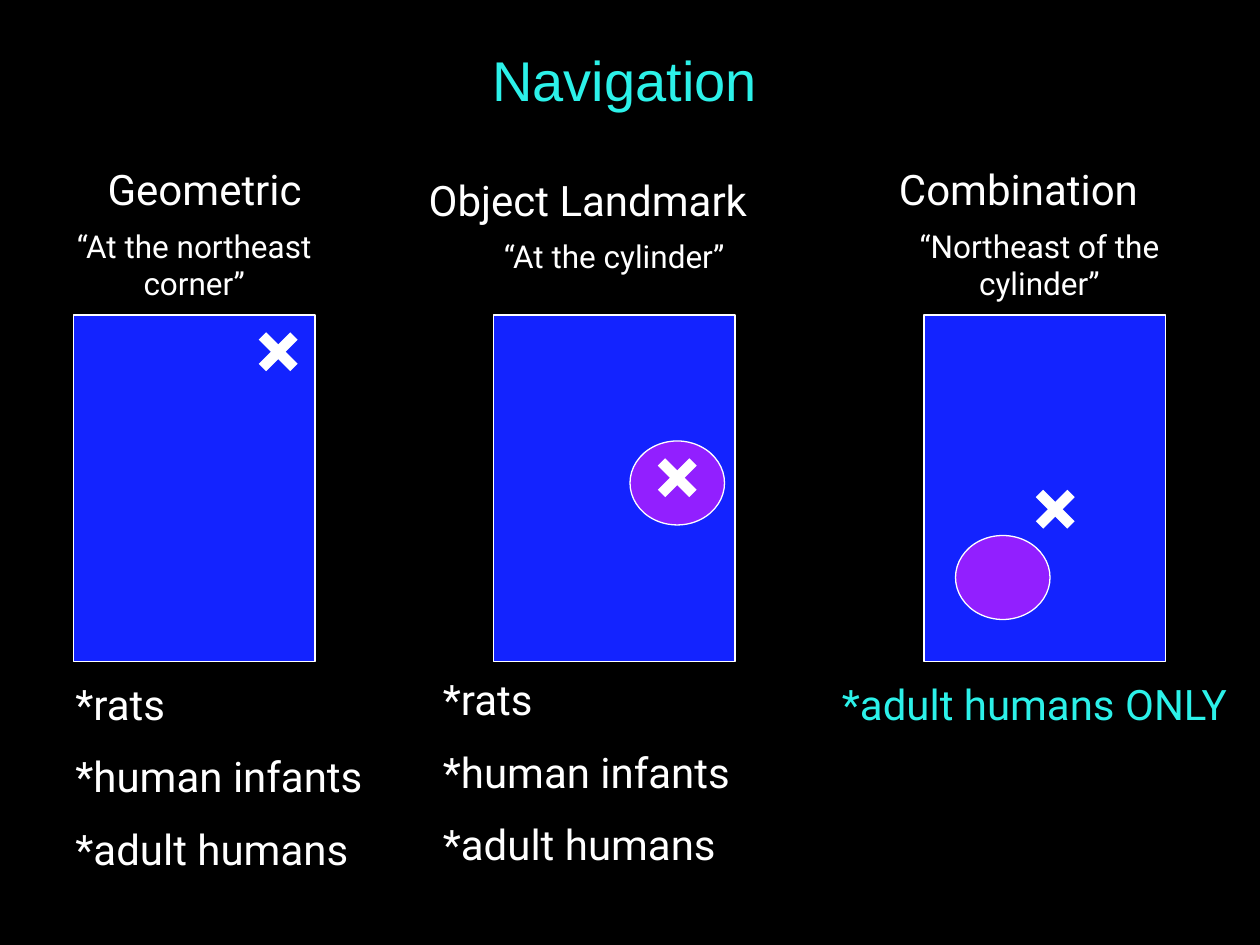
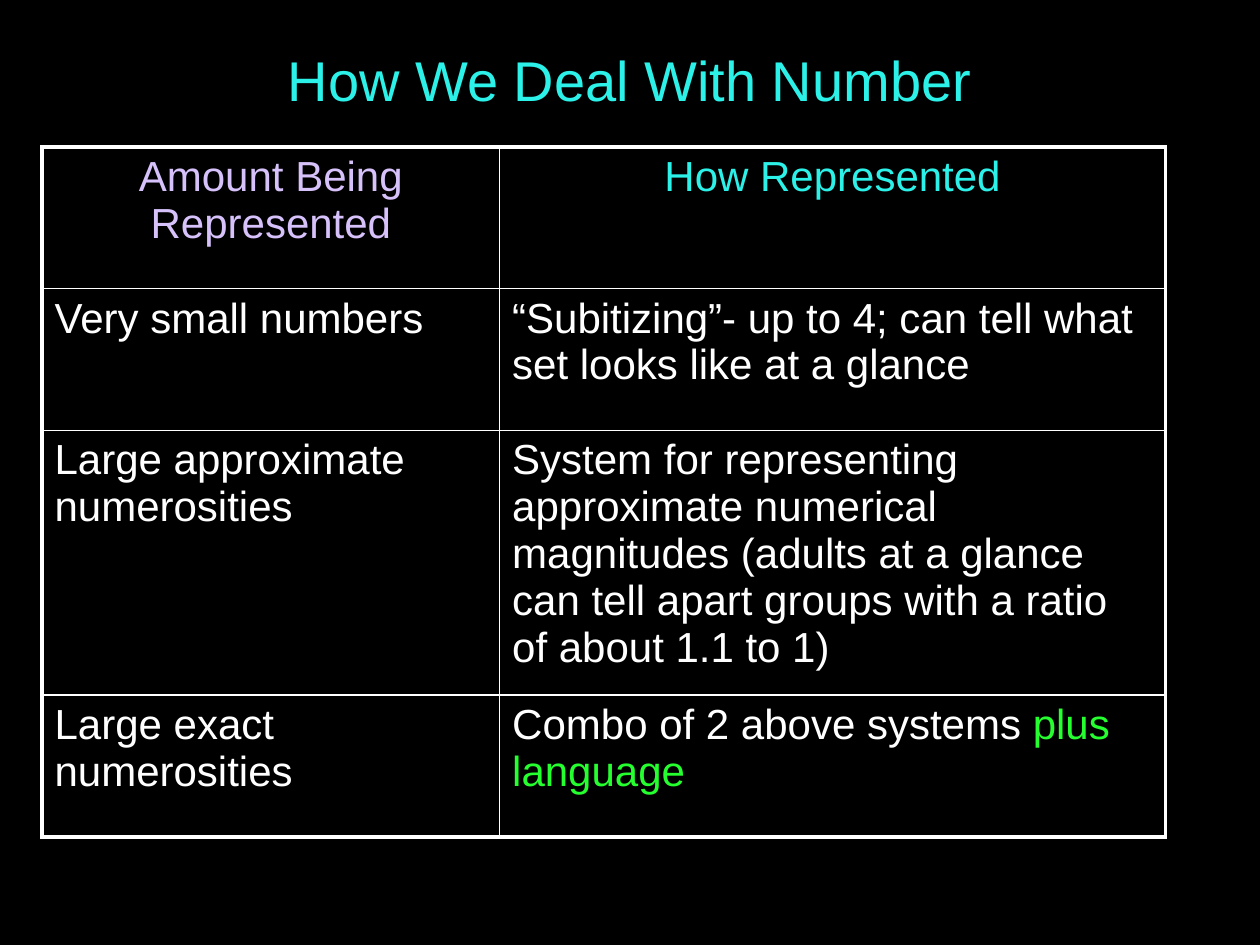
"""Build two slides on navigation and on number representation."""
from lxml import etree
from pptx import Presentation
from pptx.dml.color import RGBColor
from pptx.enum.shapes import MSO_CONNECTOR, MSO_SHAPE
from pptx.enum.text import MSO_ANCHOR, PP_ALIGN
from pptx.oxml.ns import qn
from pptx.util import Pt

LEFT, CENTER = PP_ALIGN.LEFT, PP_ALIGN.CENTER
TOP, MIDDLE = MSO_ANCHOR.TOP, MSO_ANCHOR.MIDDLE
RECT, OVAL = MSO_SHAPE.RECTANGLE, MSO_SHAPE.OVAL
STRAIGHT = MSO_CONNECTOR.STRAIGHT

COLORS = {"black": "000000", "white": "FFFFFF", "cyan": "2CF1E9", "blue": "1323FF",
          "purple": "921FFF", "lilac": "D6C1FB", "green": "26FF2F"}

ROOM_TOP, ROOM_W, ROOM_H = 180, 138, 198
DISK_W, DISK_H, CROSS = 54, 48, 18
EVERYONE = ["*rats", "*human infants", "*adult humans"]
ROOMS = [
    {"left": 42, "cross": (150, 192), "disk": None,
     "name": ("Geometric", (30, 90, 174, 36)),
     "clue": ("“At the northeast corner”", (24, 126, 174, 50)),
     "who": (EVERYONE, "white", (36, 384, 234, 122))},
    {"left": 282, "cross": (378, 264), "disk": (360, 252),
     "name": ("Object Landmark", (210, 96, 252, 36)),
     "clue": ("“At the cylinder”", (276, 132, 150, 29)),
     "who": (EVERYONE, "white", (246, 381.6, 258, 122))},
    {"left": 528, "cross": (594, 282), "disk": (546, 306),
     "name": ("Combination", (456, 90, 252, 36)),
     "clue": ("“Northeast of the cylinder”", (516, 126, 156, 50)),
     "who": (["*adult humans ONLY"], "cyan", (474, 384, 246, 36))},
]

COL_WIDTHS, ROW_H = (261.5, 380.5), 81
NUMBER_ROWS = [
    ([("Amount Being Represented", "lilac")], [("How Represented", "cyan")]),
    ([("Very small numbers", "white")],
     [("“Subitizing”- up to 4; can tell what set looks like at a glance", "white")]),
    ([("Large approximate numerosities", "white")],
     [("System for representing approximate numerical magnitudes (adults at a glance "
       "can tell apart groups with a ratio of about 1.1 to 1)", "white")]),
    ([("Large exact numerosities", "white")],
     [("Combo of 2 above systems ", "white"), ("plus language", "green")]),
]


def rgb(name):
    return RGBColor.from_string(COLORS[name])


def write(tf, paragraphs, size=24, font="Roboto", align=LEFT, anchor=TOP, gap=12.6):
    tf.word_wrap = True
    tf.vertical_anchor = anchor
    for i, runs in enumerate(paragraphs):
        p = tf.add_paragraph() if i else tf.paragraphs[0]
        p.alignment = align
        if i:
            p.space_before = Pt(gap)
        for text, color in runs:
            r = p.add_run()
            r.text = text
            r.font.size, r.font.name = Pt(size), font
            r.font.color.rgb = rgb(color)


def add_text(s, lines, box, color="white", **fmt):
    tf = s.shapes.add_textbox(*map(Pt, box)).text_frame
    write(tf, [[(line, color)] for line in lines], **fmt)


def add_slide(prs, title, left, width):
    s = prs.slides.add_slide(prs.slide_layouts[6])
    s.background.fill.solid()
    s.background.fill.fore_color.rgb = rgb("black")
    add_text(s, [title], (left, 0, width, 90), color="cyan", size=32,
             font="Arial", align=CENTER, anchor=MIDDLE)
    return s


def add_block(shapes, kind, box, color):
    sp = shapes.add_shape(kind, *map(Pt, box))
    sp.shadow.inherit = False
    sp.fill.solid()
    sp.fill.fore_color.rgb = rgb(color)
    sp.line.color.rgb = rgb("white")
    sp.line.width = Pt(0.75)


def add_cross(shapes, x, y):
    for y1, y2 in ((y, y + CROSS), (y + CROSS, y)):
        line = shapes.add_connector(STRAIGHT, Pt(x), Pt(y1), Pt(x + CROSS), Pt(y2))
        line.line.color.rgb = rgb("white")
        line.line.width = Pt(6)
        etree.SubElement(line._element.spPr, qn("a:effectLst"))


def set_border(cell, side, width):
    ln = etree.SubElement(cell._tc.get_or_add_tcPr(), qn("a:ln" + side), w=str(Pt(width)))
    fill = etree.SubElement(ln, qn("a:solidFill"))
    etree.SubElement(fill, qn("a:srgbClr"), val=COLORS["white"])


def navigation_slide(prs):
    s = add_slide(prs, "Navigation", 90, 534)
    for room in ROOMS:
        add_block(s.shapes, RECT, (room["left"], ROOM_TOP, ROOM_W, ROOM_H), "blue")
        marks = s.shapes.add_group_shape().shapes
        if room["disk"]:
            add_block(marks, OVAL, (*room["disk"], DISK_W, DISK_H), "purple")
        add_cross(marks, *room["cross"])
        for part, size in (("name", 24), ("clue", 18)):
            text, box = room[part]
            add_text(s, [text], box, size=size, align=CENTER)
        lines, color, box = room["who"]
        add_text(s, lines, box, color=color)


def number_slide(prs):
    s = add_slide(prs, "How We Deal With Number", 54, 612)
    n_rows, n_cols = len(NUMBER_ROWS), len(COL_WIDTHS)
    table = s.shapes.add_table(n_rows, n_cols, Pt(24), Pt(84),
                               Pt(sum(COL_WIDTHS)), Pt(ROW_H * n_rows)).table
    table.first_row = table.horz_banding = False
    for col, width in zip(table.columns, COL_WIDTHS):
        col.width = Pt(width)
    for i, row in enumerate(NUMBER_ROWS):
        table.rows[i].height = Pt(ROW_H)
        for j, runs in enumerate(row):
            cell = table.cell(i, j)
            outer = {"L": j == 0, "R": j == n_cols - 1, "T": i == 0, "B": i == n_rows - 1}
            for side, is_outer in outer.items():
                set_border(cell, side, 2.25 if is_outer else 1)
            cell.fill.background()
            write(cell.text_frame, [runs], font="Arial", align=LEFT if i else CENTER)


def main():
    prs = Presentation()
    prs.slide_width, prs.slide_height = Pt(720), Pt(540)
    navigation_slide(prs)
    number_slide(prs)
    prs.save("out.pptx")


if __name__ == "__main__":
    main()
